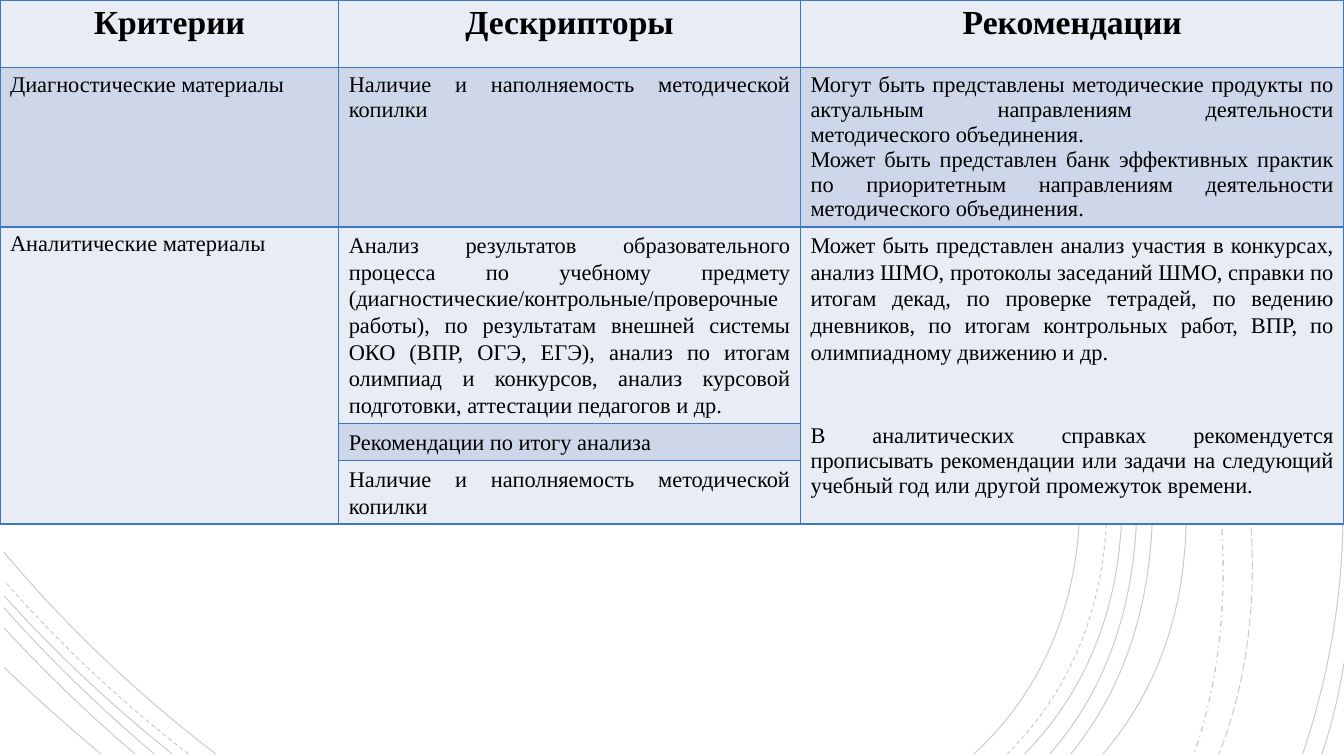
from lxml.etree import SubElement
from pptx import Presentation
from pptx.dml.color import RGBColor
from pptx.enum.dml import MSO_LINE
from pptx.enum.text import PP_ALIGN
from pptx.oxml.ns import qn
from pptx.util import Inches, Pt

BLACK = RGBColor(0x00, 0x00, 0x00)
BORDER_BLUE = RGBColor(0x3C, 0x78, 0xC3)
PALE_BLUE = RGBColor(0xE8, 0xEC, 0xF5)
MID_BLUE = RGBColor(0xCE, 0xD6, 0xE9)

BOTTOM = 7.48
SOLID, DASH = MSO_LINE.SOLID, MSO_LINE.DASH

LEFT_ARCS = [
    ((2.14, BOTTOM), (1.38, 6.9), (0.66, 6.22), (0.04, 5.48), SOLID),
    ((1.87, BOTTOM), (1.22, 6.98), (0.6, 6.4), (0.05, 5.77), DASH),
    ((1.71, BOTTOM), (1.12, 7.01), (0.55, 6.48), (0.04, 5.91), SOLID),
    ((1.53, BOTTOM), (1.01, 7.04), (0.5, 6.55), (0.04, 6.03), SOLID),
    ((1.34, BOTTOM), (0.88, 7.09), (0.45, 6.67), (0.04, 6.23), SOLID),
    ((1, BOTTOM), (0.68, 7.21), (0.35, 6.92), (0.04, 6.62), SOLID),
]
RIGHT_ARCS = [
    ((7.69, 0), (10.2, 1.15), (11.92, 5.4), (9.66, BOTTOM), SOLID),
    ((8.1, 0), (10.5, 1.25), (12.12, 5.37), (9.99, BOTTOM), DASH),
    ((8.29, 0), (10.65, 1.27), (12.25, 5.37), (10.16, BOTTOM), SOLID),
    ((8.7, 0), (10.91, 1.33), (12.25, 5.41), (10.41, BOTTOM), SOLID),
    ((8.84, 0), (11.04, 1.38), (12.38, 5.33), (10.62, BOTTOM), SOLID),
    ((9.08, 0), (11.18, 1.47), (12.82, 5.29), (10.94, BOTTOM), SOLID),
    ((9.72, 0), (11.59, 1.66), (12.69, 5.09), (11.84, BOTTOM), MSO_LINE.DASH_DOT),
    ((9.84, 0), (11.77, 1.69), (13.06, 4.99), (12.09, BOTTOM), MSO_LINE.LONG_DASH),
    ((11.18, 0), (13.24, 1.85), (13.8, 4.9), (12.92, BOTTOM), SOLID),
    ((13.33, 6.58), (13.28, 6.89), (13.21, 7.19), (13.11, BOTTOM), SOLID),
]

COLUMN_WIDTHS = [3.36, 4.58, 5.39]
ROW_HEIGHTS = [0.67, 1.58, 1.95, 0.37, 0.62]
HEADINGS = ["Критерии", "Дескрипторы", "Рекомендации"]
TOOLKIT = "Наличие и наполняемость методической копилки"
PRODUCTS = (
    "Могут быть представлены методические продукты по актуальным направлениям "
    "деятельности методического объединения.\n"
    "Может быть представлен банк эффективных практик по приоритетным направлениям "
    "деятельности методического объединения."
)
ANALYSIS = (
    "Анализ результатов образовательного процесса по учебному предмету "
    "(диагностические/контрольные/проверочные работы), по результатам внешней "
    "системы ОКО (ВПР, ОГЭ, ЕГЭ), анализ по итогам олимпиад и конкурсов, анализ "
    "курсовой подготовки, аттестации педагогов и др."
)
REPORTS = (
    "Может быть представлен анализ участия в конкурсах, анализ ШМО, протоколы "
    "заседаний ШМО, справки по итогам декад, по проверке тетрадей, по ведению "
    "дневников, по итогам контрольных работ, ВПР, по олимпиадному движению и др.\n"
    "В аналитических справках рекомендуется прописывать рекомендации или задачи "
    "на следующий учебный год или другой промежуток времени."
)


class CriteriaSlide:
    """Holds the slide and its style, with a method for each kind of element."""

    font_name = "Times New Roman"
    body_size = Pt(16)
    heading_size = Pt(24)

    def __init__(self, presentation):
        self.slide = presentation.slides.add_slide(presentation.slide_layouts[6])

    def add_arc(self, start, first_control, second_control, end, dash):
        points = [(Inches(x), Inches(y)) for x, y in (first_control, second_control, end)]
        builder = self.slide.shapes.build_freeform(Inches(start[0]), Inches(start[1]))
        builder.add_line_segments(points, close=False)
        shape = builder.convert_to_shape()
        shape.shadow.inherit = False
        shape.fill.background()
        shape.line.color.rgb = BLACK
        shape.line.width = Pt(1 if dash == MSO_LINE.DASH_DOT else 0.75)
        shape.line.dash_style = dash
        line_color = shape.line.fill._xPr.find(".//" + qn("a:srgbClr"))
        SubElement(line_color, qn("a:alpha"), val="20000")
        outline = next(shape.element.iter(qn("a:path")))
        curve = SubElement(outline, qn("a:cubicBezTo"))
        for segment in outline.findall(qn("a:lnTo")):
            curve.append(segment[0])
            outline.remove(segment)

    def add_table(self, column_widths, row_heights):
        frame = self.slide.shapes.add_table(
            len(row_heights), len(column_widths), 0, 0,
            Inches(sum(column_widths)), Inches(sum(row_heights)))
        table = frame.table
        table.first_row = table.horz_banding = False
        for column, width in zip(table.columns, column_widths):
            column.width = Inches(width)
        for index, (row, height) in enumerate(zip(table.rows, row_heights)):
            row.height = Inches(height)
            for cell in row.cells:
                self.style_cell(cell, MID_BLUE if index % 2 else PALE_BLUE)
        return table

    def style_cell(self, cell, color):
        properties = cell._tc.get_or_add_tcPr()
        for side in ("a:lnL", "a:lnR", "a:lnT", "a:lnB"):
            border = SubElement(properties, qn(side), w=str(Pt(1)))
            fill = SubElement(border, qn("a:solidFill"))
            SubElement(fill, qn("a:srgbClr"), val=str(BORDER_BLUE))
        cell.fill.solid()
        cell.fill.fore_color.rgb = color

    def write_cell(self, cell, text, heading=False, line_spacing=None, space_after=None):
        cell.text_frame.text = text
        for paragraph in cell.text_frame.paragraphs:
            paragraph.alignment = PP_ALIGN.CENTER if heading else PP_ALIGN.JUSTIFY
            paragraph.line_spacing = line_spacing
            paragraph.space_after = space_after
            for run in paragraph.runs:
                run.font.name = self.font_name
                run.font.size = self.heading_size if heading else self.body_size
                run.font.bold = heading
                run.font.color.rgb = BLACK


def main():
    presentation = Presentation()
    presentation.slide_width = Inches(13.33)
    presentation.slide_height = Inches(7.5)
    page = CriteriaSlide(presentation)

    for arc in LEFT_ARCS + RIGHT_ARCS:
        page.add_arc(*arc)

    table = page.add_table(COLUMN_WIDTHS, ROW_HEIGHTS)
    for column in (0, 2):
        table.cell(2, column).merge(table.cell(4, column))
    for column, heading in enumerate(HEADINGS):
        page.write_cell(table.cell(0, column), heading, heading=True)
    for column, text in enumerate(["Диагностические материалы", TOOLKIT, PRODUCTS]):
        page.write_cell(table.cell(1, column), text)
    page.write_cell(table.cell(2, 0), "Аналитические материалы")
    for row, text in enumerate([ANALYSIS, "Рекомендации по итогу анализа", TOOLKIT], start=2):
        page.write_cell(table.cell(row, 1), text, line_spacing=1.07, space_after=Pt(8))

    reports_cell = table.cell(2, 2)
    page.write_cell(reports_cell, REPORTS, line_spacing=1.07)
    advice = reports_cell.text_frame.paragraphs[1]
    advice.line_spacing = None
    advice.space_before = Pt(42)

    presentation.save("out.pptx")


if __name__ == "__main__":
    main()
